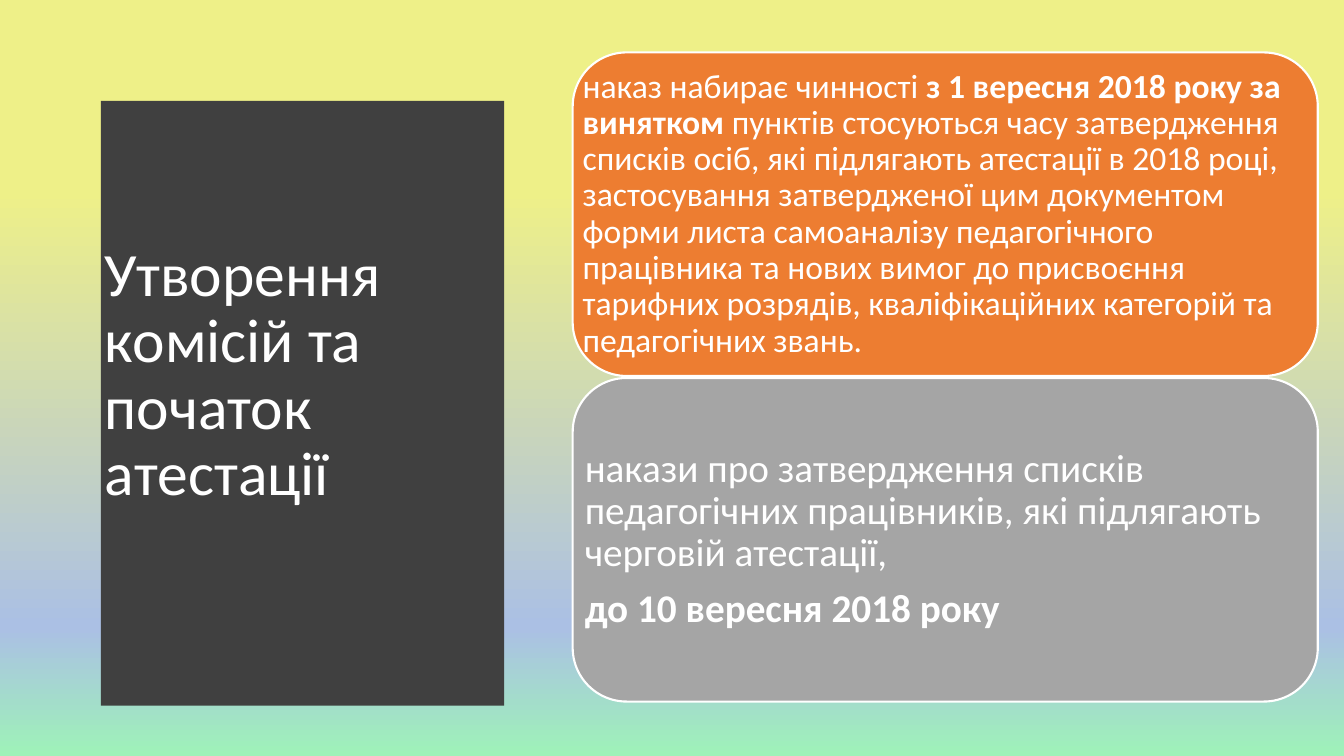
import pptx
import pptx.util
import pptx.dml.color
import pptx.enum.shapes
import pptx.enum.text
import pptx.oxml
from pptx.oxml.ns import nsdecls

Inches, Pt = pptx.util.Inches, pptx.util.Pt

TITLE = "Утворення комісій та початок атестації"
# Each card: fill, text size, inset, paragraphs of (text, bold) runs
CARDS = [
    ("orange", 24, 0.1, [[
        ("наказ набирає чинності ", False),
        ("з 1 вересня 2018 року за винятком", True),
        (" пунктів стосуються часу затвердження списків осіб, які підлягають "
         "атестації в 2018 році, застосування затвердженої цим документом форми "
         "листа самоаналізу педагогічного працівника та нових вимог до присвоєння "
         "тарифних розрядів, кваліфікаційних категорій та педагогічних звань.", False),
    ]]),
    ("grey", 28, 0.12, [
        [("накази про затвердження списків педагогічних працівників, "
          "які підлягають черговій атестації,", False)],
        [("до 10 вересня 2018 року", True)],
    ]),
]
COLORS = {"panel": "404040", "orange": "ED7D31", "grey": "A5A5A5", "white": "FFFFFF"}
BACKGROUND = [(0, "EEF088"), (25, "EEF088"), (83, "ABC0E4"), (100, "9EF2B8")]
FONT = "Calibri"

SLIDE_W, SLIDE_H = 13.33, 7.5
TOP, HEIGHT = 0.52, 6.44
PANEL_LEFT, PANEL_EDGE, BULGE = 0.53, 5.08, 0.24
CARD_LEFT, CARD_W, CARD_GAP = 5.68, 7.39, 0.02
CARD_H = (HEIGHT - CARD_GAP) / len(CARDS)
CURVE_STEPS = 40


def color(name):
    return pptx.dml.color.RGBColor.from_string(COLORS[name])


def style(p, size):
    p.line_spacing = 0.9
    p.font.name, p.font.size, p.font.color.rgb = FONT, Pt(size), color("white")


def paint_background(s):
    s.background.fill.gradient()
    grad = s.background.fill._fill._gradFill
    for child in list(grad):
        grad.remove(child)
    stops = "".join(f'<a:gs pos="{pos * 1000}"><a:srgbClr val="{rgb}"/></a:gs>'
                    for pos, rgb in BACKGROUND)
    for xml in (f'<a:gsLst {nsdecls("a")}>{stops}</a:gsLst>',
                f'<a:lin {nsdecls("a")} ang="5400000" scaled="0"/>'):
        grad.append(pptx.oxml.parse_xml(xml))


def add_panel(s):
    """Dark panel whose right side bows out as a parabola."""
    steps = [i / CURVE_STEPS for i in range(CURVE_STEPS + 1)]
    curve = [(PANEL_EDGE + BULGE * 4 * t * (1 - t), TOP + HEIGHT * t) for t in steps]
    fb = s.shapes.build_freeform(PANEL_LEFT, TOP, scale=Inches(1))
    fb.add_line_segments(curve + [(PANEL_LEFT, TOP + HEIGHT)], close=True)
    sp = fb.convert_to_shape()
    sp.shadow.inherit = False
    sp.fill.solid()
    sp.fill.fore_color.rgb = color("panel")
    sp.line.fill.background()


def add_title(s):
    sp = s.shapes.title
    sp.left, sp.top, sp.width, sp.height = map(Inches, (0.94, 1.11, 3.74, 5.24))
    tf = sp.text_frame
    tf.text, tf.word_wrap = TITLE, True
    tf.vertical_anchor = pptx.enum.text.MSO_ANCHOR.MIDDLE
    p = tf.paragraphs[0]
    p.alignment = pptx.enum.text.PP_ALIGN.LEFT
    style(p, 44)


def add_card(s, row, fill, size, inset, paragraphs):
    box = [Inches(v) for v in
           (CARD_LEFT, TOP + row * (CARD_H + CARD_GAP), CARD_W, CARD_H)]
    sp = s.shapes.add_shape(pptx.enum.shapes.MSO_SHAPE.ROUNDED_RECTANGLE, *box)
    sp.shadow.inherit = False
    sp.fill.solid()
    sp.fill.fore_color.rgb = color(fill)
    sp.line.color.rgb, sp.line.width = color("white"), Pt(1.5)

    # The text spans the full card width, beyond the inset of the round corners
    tf = s.shapes.add_textbox(*box).text_frame
    tf.word_wrap = True
    tf.vertical_anchor = pptx.enum.text.MSO_ANCHOR.MIDDLE
    tf.margin_left = tf.margin_right = tf.margin_top = tf.margin_bottom = Inches(inset)
    for i, runs in enumerate(paragraphs):
        p = tf.add_paragraph() if i else tf.paragraphs[0]
        style(p, size)
        p.space_after = Pt(size * 0.35)
        for text, bold in runs:
            r = p.add_run()
            r.text, r.font.bold = text, bold


def main():
    prs = pptx.Presentation()
    prs.slide_width, prs.slide_height = Inches(SLIDE_W), Inches(SLIDE_H)
    s = prs.slides.add_slide(prs.slide_layouts[5])
    paint_background(s)
    add_panel(s)
    add_title(s)
    # Bring the title in front of the panel
    s.shapes._spTree.append(s.shapes.title._element)
    for row, card in enumerate(CARDS):
        add_card(s, row, *card)
    prs.save("out.pptx")


if __name__ == "__main__":
    main()
